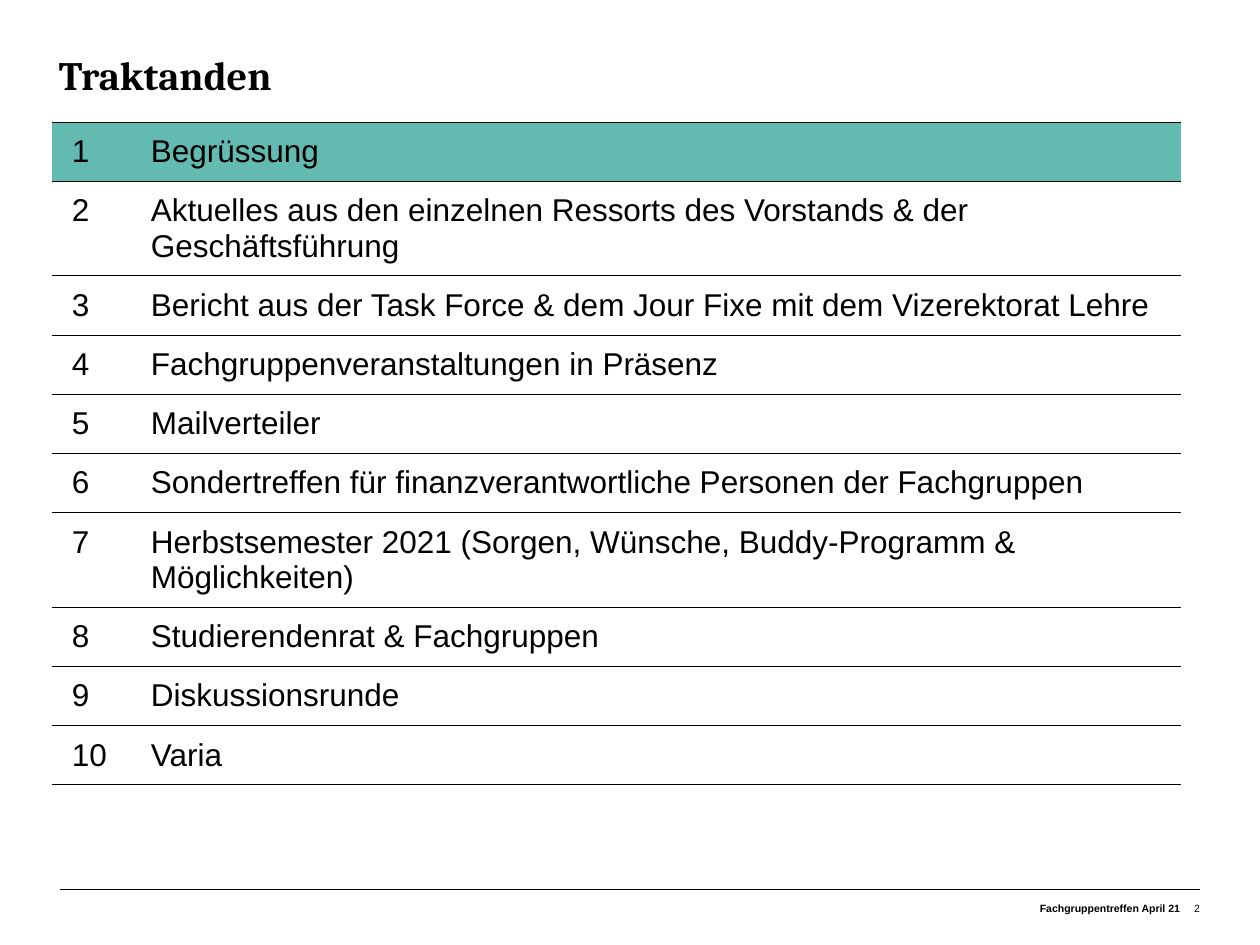
from typing import NamedTuple

from lxml import etree
from pptx import Presentation
from pptx.dml.color import RGBColor
from pptx.enum.shapes import MSO_CONNECTOR
from pptx.enum.text import MSO_ANCHOR, MSO_AUTO_SIZE, PP_ALIGN
from pptx.oxml.ns import qn
from pptx.util import Emu, Pt

BLACK = RGBColor(0x00, 0x00, 0x00)
TEAL = RGBColor(0x63, 0xBA, 0xB1)
TOP = MSO_ANCHOR.TOP
LEFT = PP_ALIGN.LEFT
RIGHT = PP_ALIGN.RIGHT
NO_AUTOFIT = MSO_AUTO_SIZE.NONE
STRAIGHT = MSO_CONNECTOR.STRAIGHT

EMU_PER_PX = 914400 / 126
TITLE_ONLY_LAYOUT = 5
ROW_HEIGHT = 52
COLUMN_WIDTHS = (79, 1050)
CELL_INSET_X = 20
CELL_INSET_Y = 12
RULE_WIDTH = Pt(0.5)

AGENDA = (
    "Begrüssung",
    "Aktuelles aus den einzelnen Ressorts des Vorstands & der Geschäftsführung",
    "Bericht aus der Task Force & dem Jour Fixe mit dem Vizerektorat Lehre",
    "Fachgruppenveranstaltungen in Präsenz",
    "Mailverteiler",
    "Sondertreffen für finanzverantwortliche Personen der Fachgruppen",
    "Herbstsemester 2021 (Sorgen, Wünsche, Buddy-Programm & Möglichkeiten)",
    "Studierendenrat & Fachgruppen",
    "Diskussionsrunde",
    "Varia",
)


class FooterItem(NamedTuple):
    text: str
    left: int
    width: int
    bold: bool


FOOTER = (
    FooterItem("Fachgruppentreffen April 21", 917, 263, True),
    FooterItem("2", 1180, 20, False),
)


def px(length: int) -> Emu:
    return Emu(round(length * EMU_PER_PX))


def style_text(frame, size: float, font: str = "Arial", bold: bool = False, align=LEFT) -> None:
    for para in frame.paragraphs:
        para.alignment = align
        for span in para.runs:
            span.font.name = font
            span.font.size = Pt(size)
            span.font.bold = bold
            span.font.color.rgb = BLACK


def set_insets(frame, top: int = 0) -> None:
    frame.margin_left = frame.margin_right = frame.margin_bottom = 0
    frame.margin_top = px(top)
    frame.word_wrap = True
    frame.auto_size = NO_AUTOFIT
    frame.vertical_anchor = TOP


def add_title(page) -> None:
    title = page.shapes.title
    title.left, title.top, title.width, title.height = map(px, (59, 55, 1142, 105))
    frame = title.text_frame
    frame.text = "Traktanden"
    set_insets(frame)
    frame.paragraphs[0].line_spacing = Pt(25)
    style_text(frame, 23, "Cambria", bold=True)


def set_borders(cell) -> None:
    properties = cell._tc.get_or_add_tcPr()
    for index, side in enumerate(("lnL", "lnR", "lnT", "lnB")):
        border = etree.Element(qn(f"a:{side}"))
        if side in ("lnT", "lnB"):
            border.set("w", str(RULE_WIDTH))
            fill = etree.SubElement(border, qn("a:solidFill"))
            etree.SubElement(fill, qn("a:srgbClr"), val=str(BLACK))
        else:
            etree.SubElement(border, qn("a:noFill"))
        properties.insert(index, border)


def fill_cell(cell, text: str, highlighted: bool) -> None:
    cell.text_frame.text = text
    cell.margin_left = cell.margin_right = px(CELL_INSET_X)
    cell.margin_top = cell.margin_bottom = px(CELL_INSET_Y)
    cell.vertical_anchor = TOP
    style_text(cell.text_frame, 18)
    if highlighted:
        cell.fill.solid()
        cell.fill.fore_color.rgb = TEAL
    else:
        cell.fill.background()
    set_borders(cell)


def add_agenda(page) -> None:
    table = page.shapes.add_table(
        len(AGENDA), len(COLUMN_WIDTHS), px(52), px(122),
        px(sum(COLUMN_WIDTHS)), px(ROW_HEIGHT * len(AGENDA)),
    ).table
    table.first_row = False
    table.horz_banding = False
    for column, width in zip(table.columns, COLUMN_WIDTHS):
        column.width = px(width)
    for index, topic in enumerate(AGENDA):
        for column, text in enumerate((str(index + 1), topic)):
            fill_cell(table.cell(index, column), text, highlighted=index == 0)


def add_footer(page) -> None:
    rule = page.shapes.add_connector(STRAIGHT, px(60), px(889), px(1200), px(889))
    rule.line.color.rgb = BLACK
    rule.line.width = Pt(0.25)
    etree.SubElement(rule._element.spPr, qn("a:effectLst"))
    for item in FOOTER:
        box = page.shapes.add_textbox(px(item.left), px(900), px(item.width), px(25))
        box.text_frame.text = item.text
        set_insets(box.text_frame, top=2)
        style_text(box.text_frame, 6, bold=item.bold, align=RIGHT)


def main() -> None:
    deck = Presentation()
    deck.slide_width = px(1260)
    deck.slide_height = px(945)
    page = deck.slides.add_slide(deck.slide_layouts[TITLE_ONLY_LAYOUT])
    add_title(page)
    add_footer(page)
    add_agenda(page)
    deck.save("out.pptx")


if __name__ == "__main__":
    main()
